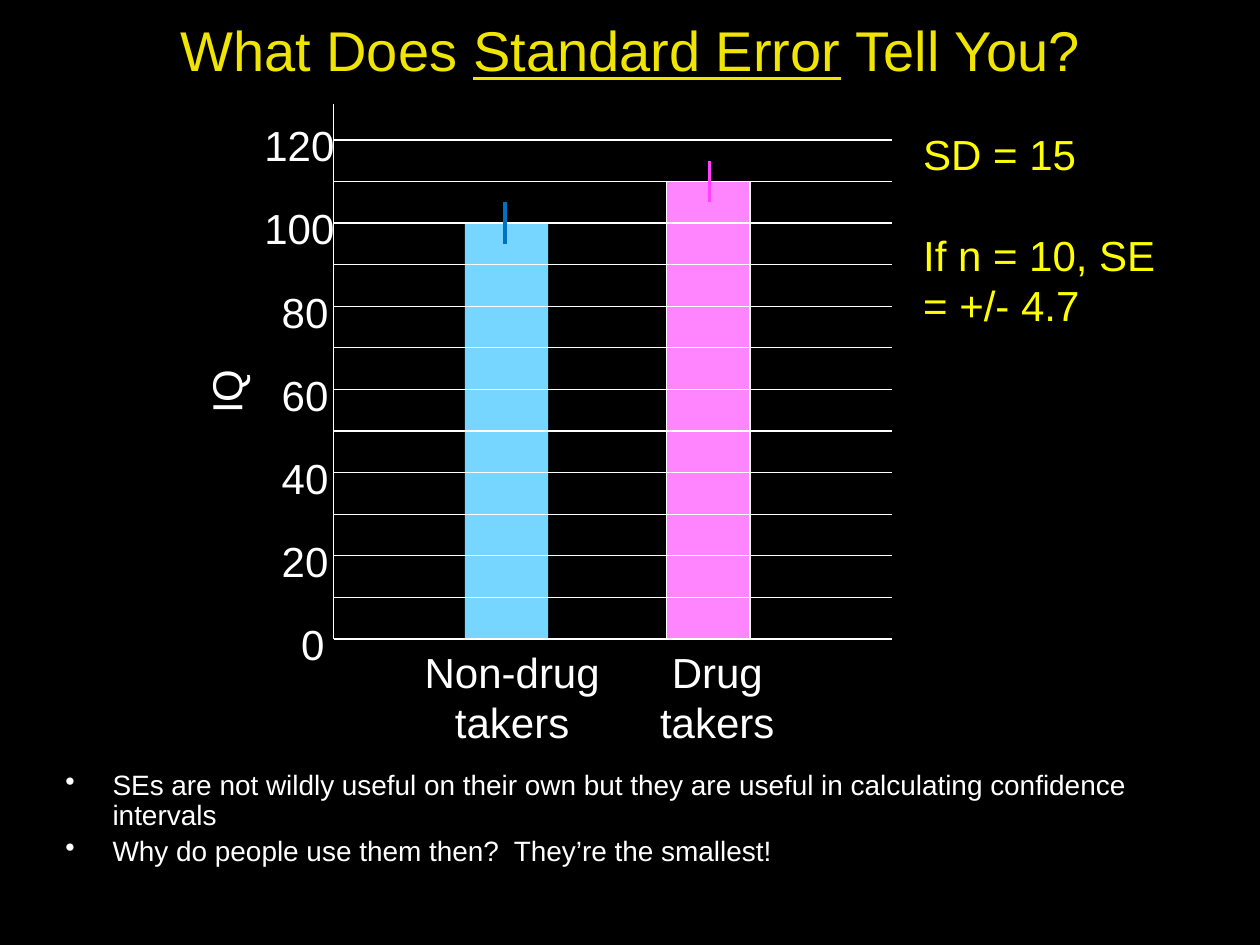
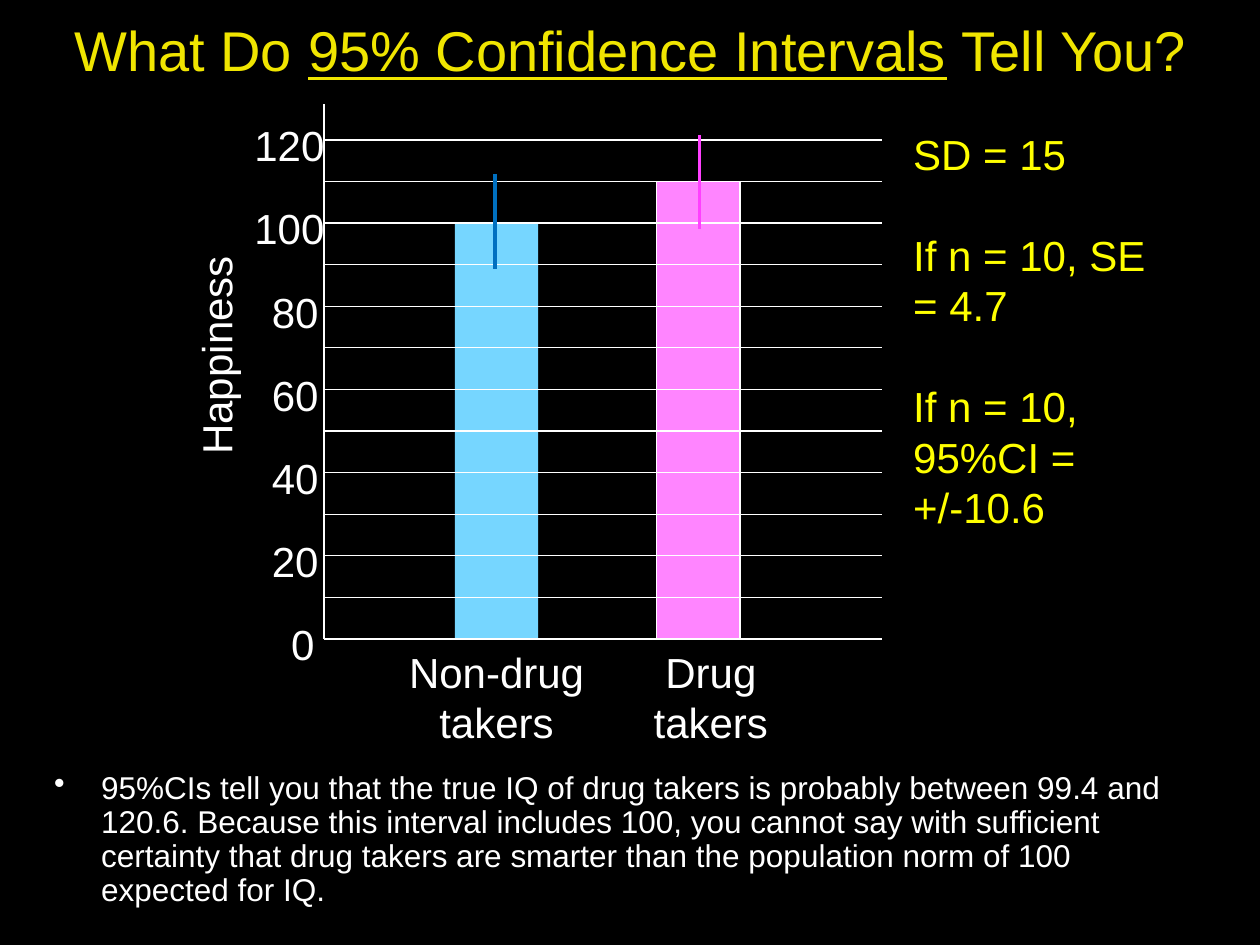
import pptx
import pptx.util
import pptx.dml.color
import pptx.enum.shapes
import pptx.enum.text
import pptx.oxml.ns
import lxml.etree

Cm, Pt = pptx.util.Cm, pptx.util.Pt
RGBColor = pptx.dml.color.RGBColor
ALIGN = pptx.enum.text.PP_ALIGN
ANCHOR = pptx.enum.text.MSO_ANCHOR
qn = pptx.oxml.ns.qn

BLACK = RGBColor(0x00, 0x00, 0x00)
WHITE = RGBColor(0xFF, 0xFF, 0xFF)
GOLD = RGBColor(0xF0, 0xE5, 0x00)
YELLOW = RGBColor(0xFF, 0xFF, 0x00)
SKY = RGBColor(0x76, 0xD6, 0xFF)
PINK = RGBColor(0xFF, 0x85, 0xFF)
BLUE = RGBColor(0x00, 0x70, 0xC0)
ROSE = RGBColor(0xFF, 0x40, 0xFF)

PAGES = [
    dict(
        title="What Does _Standard Error_ Tell You?",
        axis="IQ", axis_top=7.26, left=6.73,
        ranges=[(95, 105), (105, 115)],
        groups=[("Non-drug takers", 1.22, 4.75), ("Drug takers", 5.61, 4.24)],
        note="SD = 15\nIf n = 10, SE = +/- 4.7", note_high=4.37,
        points="SEs are not wildly useful on their own but they are useful in "
               "calculating confidence intervals\n"
               "Why do people use them then?  They’re the smallest!",
        size=16, body=(1.07, 15.42, 23.29, 2.24),
    ),
    dict(
        title="What Do _95% Confidence Intervals_ Tell You?",
        axis="Happiness", axis_top=6.53, left=6.53,
        ranges=[(89, 111.8), (98.5, 121.2)],
        groups=[("Non-drug takers", 0.99, 4.98), ("Drug\ntakers", 6.38, 2.84)],
        note="SD = 15\nIf n = 10, SE = 4.7\nIf n = 10, 95%CI = +/-10.6",
        note_high=8.46,
        points="95%CIs tell you that the true IQ of drug takers is probably between "
               "99.4 and 120.6. Because this interval includes 100, you cannot say "
               "with sufficient certainty that drug takers are smarter than the "
               "population norm of 100 expected for IQ.",
        size=18, body=(0.84, 15.44, 23.29, 4.17),
    ),
]
BARS = [
    dict(value=100, shift=2.64, mid=3.45, fill=SKY, edge=None, error=BLUE),
    dict(value=110, shift=6.71, mid=7.57, fill=PINK, edge=WHITE, error=ROSE),
]
TICKS = {1: (-0.91, 1.0), 2: (-1.3, 1.45), 3: (-1.65, 1.93)}
BASE, TOP, UNIT = 12.88, 2.1, 10.06 / 120
WIDE, BAR = 11.25, 1.68


def level(value):
    return BASE - value * UNIT


def write(slide, text, left, top, wide, high, size=24, color=WHITE, align=ALIGN.LEFT,
          anchor=ANCHOR.TOP, wrap=True, turn=0, gap=0, bullet=False):
    box = slide.shapes.add_textbox(Cm(left), Cm(top), Cm(wide), Cm(high))
    box.rotation = turn
    frame = box.text_frame
    frame.word_wrap = wrap
    frame.vertical_anchor = anchor
    for row, line in enumerate(text.split("\n")):
        para = frame.paragraphs[0] if row == 0 else frame.add_paragraph()
        para.alignment = align
        if row and gap:
            para.space_before = Pt(gap)
        for part, words in enumerate(line.split("_")):
            run = para.add_run()
            run.text = words
            run.font.name = "Arial"
            run.font.size = Pt(size)
            run.font.color.rgb = color
            if part % 2:
                run.font.underline = True
        if bullet:
            para.line_spacing = 0.9
            props = para._p.get_or_add_pPr()
            props.set("marL", str(Cm(0.95)))
            props.set("indent", str(-Cm(0.95)))
            lxml.etree.SubElement(props, qn("a:buChar")).set("char", "•")


def rule(slide, x1, y1, x2, y2, color=WHITE, width=0.75):
    line = slide.shapes.add_connector(
        pptx.enum.shapes.MSO_CONNECTOR.STRAIGHT, Cm(x1), Cm(y1), Cm(x2), Cm(y2))
    line.line.color.rgb = color
    line.line.width = Pt(width)
    lxml.etree.SubElement(line._element.spPr, qn("a:effectLst"))


def column(slide, left, bar):
    top = level(bar["value"])
    shape = slide.shapes.add_shape(
        pptx.enum.shapes.MSO_SHAPE.RECTANGLE,
        Cm(left + bar["shift"]), Cm(top), Cm(BAR), Cm(BASE - top))
    shape.shadow.inherit = False
    shape.fill.solid()
    shape.fill.fore_color.rgb = bar["fill"]
    if bar["edge"] is None:
        shape.line.fill.background()
    else:
        shape.line.color.rgb = bar["edge"]
        shape.line.width = Pt(0.75)


def plot(slide, page):
    left = page["left"]
    rule(slide, left, TOP, left, BASE)
    for bar in BARS:
        column(slide, left, bar)
    for value in range(0, 121, 10):
        rule(slide, left, level(value), left + WIDE, level(value))
    for value in range(0, 121, 20):
        shift, wide = TICKS[len(str(value))]
        write(slide, str(value), left + shift, level(value) - 0.53, wide, 1.27, wrap=False)
    for bar, (low, high) in zip(BARS, page["ranges"]):
        mid = left + bar["mid"]
        rule(slide, mid, level(high), mid, level(low), color=bar["error"], width=2)
    for name, shift, wide in page["groups"]:
        write(slide, name, left + shift, 12.91, wide, 2.31, align=ALIGN.CENTER)
    write(slide, page["axis"], left - 4.95, page["axis_top"], 5.54, 1.27,
          align=ALIGN.CENTER, turn=270)


def main():
    deck = pptx.Presentation()
    deck.slide_width, deck.slide_height = Cm(25.4), Cm(19.05)
    back = deck.slide_master.background.fill
    back.solid()
    back.fore_color.rgb = BLACK
    for page in PAGES:
        slide = deck.slides.add_slide(deck.slide_layouts[6])
        write(slide, page["title"], 0.64, 0.2, 24.13, 1.6, size=32, color=GOLD,
              align=ALIGN.CENTER, anchor=ANCHOR.MIDDLE)
        plot(slide, page)
        write(slide, page["note"], page["left"] + 11.63, 2.47, 5.54, page["note_high"],
              color=YELLOW, gap=28.8)
        write(slide, page["points"], *page["body"], size=page["size"], gap=3.4, bullet=True)
    deck.save("out.pptx")


if __name__ == "__main__":
    main()
